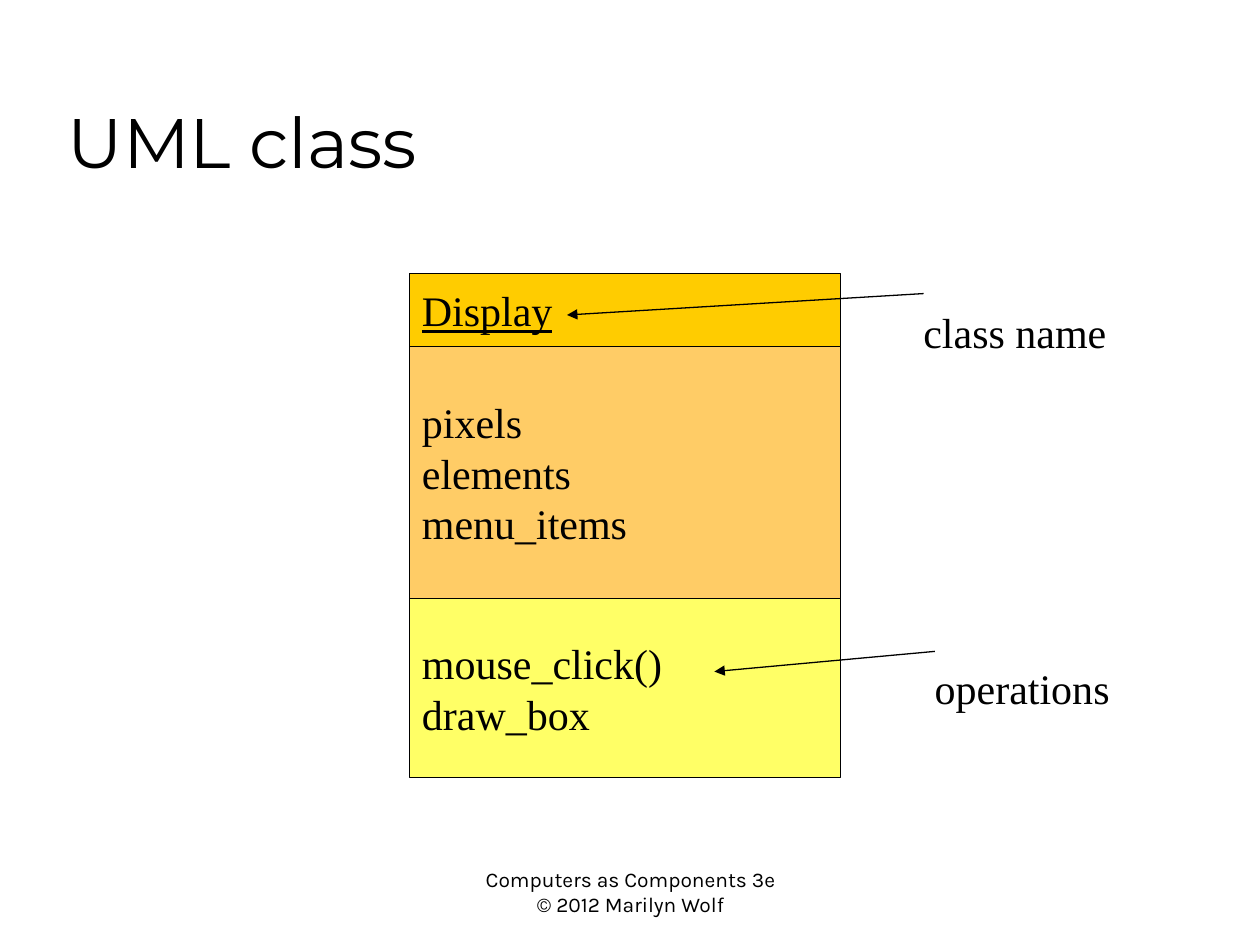
"""Build the UML class slide."""
from dataclasses import dataclass

from lxml import etree
from pptx import Presentation
from pptx.dml.color import RGBColor
from pptx.enum.shapes import MSO_CONNECTOR, MSO_SHAPE
from pptx.enum.text import MSO_ANCHOR, MSO_AUTO_SIZE, PP_ALIGN
from pptx.oxml.ns import qn
from pptx.util import Inches, Pt

RECT = MSO_SHAPE.RECTANGLE
STRAIGHT = MSO_CONNECTOR.STRAIGHT
TOP, MIDDLE, BOTTOM = MSO_ANCHOR.TOP, MSO_ANCHOR.MIDDLE, MSO_ANCHOR.BOTTOM
LEFT, CENTER = PP_ALIGN.LEFT, PP_ALIGN.CENTER
FIT_SHAPE = MSO_AUTO_SIZE.SHAPE_TO_FIT_TEXT


@dataclass(frozen=True)
class TextStyle:
    font: str
    size: float
    leading: float | None = None


@dataclass(frozen=True)
class Theme:
    ink: RGBColor = RGBColor(0, 0, 0)
    name_fill: RGBColor = RGBColor(0xFF, 0xCC, 0x00)
    attribute_fill: RGBColor = RGBColor(0xFF, 0xCC, 0x66)
    operation_fill: RGBColor = RGBColor(0xFF, 0xFF, 0x66)
    line_width: float = 0.75
    title: TextStyle = TextStyle("Montserrat", 40)
    body: TextStyle = TextStyle("Times New Roman", 24, 28.8)
    footer: TextStyle = TextStyle("Karla", 12)


@dataclass(frozen=True)
class Compartment:
    lines: tuple[str, ...]
    height: float
    fill: RGBColor
    underline: bool = False


@dataclass(frozen=True)
class Callout:
    text: str
    box: tuple[float, float, float, float]
    start: tuple[float, float]
    end: tuple[float, float]


THEME = Theme()
CLASS_LEFT, CLASS_TOP, CLASS_WIDTH = 3.25, 2.17, 3.42
COMPARTMENTS = (
    Compartment(("Display",), 0.58, THEME.name_fill, underline=True),
    Compartment(("pixels", "elements", "menu_items"), 2, THEME.attribute_fill),
    Compartment(("mouse_click()", "draw_box"), 1.42, THEME.operation_fill),
)
CALLOUTS = (
    Callout("operations", (7.32, 5.21, 1.59, 0.5), (7.42, 5.17), (5.67, 5.33)),
    Callout("class name", (7.23, 2.38, 1.65, 0.5), (7.33, 2.33), (4.5, 2.5)),
)


def write_lines(s, lines: tuple[str, ...], style: TextStyle, anchor=TOP,
                align=LEFT, wrap: bool = True, underline: bool = False) -> None:
    tf = s.text_frame
    tf.word_wrap = wrap
    tf.vertical_anchor = anchor
    for i, line in enumerate(lines):
        p = tf.add_paragraph() if i else tf.paragraphs[0]
        p.text = line
        p.alignment = align
        if style.leading:
            p.line_spacing = Pt(style.leading)
        p.font.name = style.font
        p.font.size = Pt(style.size)
        p.font.color.rgb = THEME.ink
        if underline:
            p.font.underline = True


def add_text(shapes, box: tuple[float, float, float, float],
             lines: tuple[str, ...], style: TextStyle, **options):
    s = shapes.add_textbox(*map(Inches, box))
    write_lines(s, lines, style, **options)
    return s


def add_compartment(shapes, item: Compartment, top: float) -> None:
    s = shapes.add_shape(RECT, Inches(CLASS_LEFT), Inches(top),
                         Inches(CLASS_WIDTH), Inches(item.height))
    s.shadow.inherit = False
    s.fill.solid()
    s.fill.fore_color.rgb = item.fill
    s.line.color.rgb = THEME.ink
    s.line.width = Pt(THEME.line_width)
    write_lines(s, item.lines, THEME.body, anchor=MIDDLE, wrap=False,
                underline=item.underline)


def add_callout(shapes, item: Callout) -> None:
    group = shapes.add_group_shape()
    arrow = group.shapes.add_connector(STRAIGHT, *map(Inches, item.start + item.end))
    arrow.line.color.rgb = THEME.ink
    arrow.line.width = Pt(THEME.line_width)
    etree.SubElement(arrow.line._get_or_add_ln(), qn("a:tailEnd"), type="triangle")
    etree.SubElement(arrow._element.spPr, qn("a:effectLst"))
    label = add_text(group.shapes, item.box, (item.text,), THEME.body, wrap=False)
    label.text_frame.auto_size = FIT_SHAPE


def main() -> None:
    prs = Presentation()
    prs.slide_width, prs.slide_height = Inches(10), Inches(7.5)
    shapes = prs.slides.add_slide(prs.slide_layouts[6]).shapes
    footer = add_text(shapes, (3.67, 6.83, 2.67, 0.5),
                      ("Computers as Components 3e", "© 2012 Marilyn Wolf"),
                      THEME.footer, align=CENTER)
    footer.text_frame.auto_size = FIT_SHAPE
    add_text(shapes, (0.44, 0.25, 8.5, 1.25), ("UML class",), THEME.title,
             anchor=BOTTOM)
    top = CLASS_TOP
    for item in COMPARTMENTS:
        add_compartment(shapes, item, top)
        top += item.height
    for item in CALLOUTS:
        add_callout(shapes, item)
    prs.save("out.pptx")


if __name__ == "__main__":
    main()
